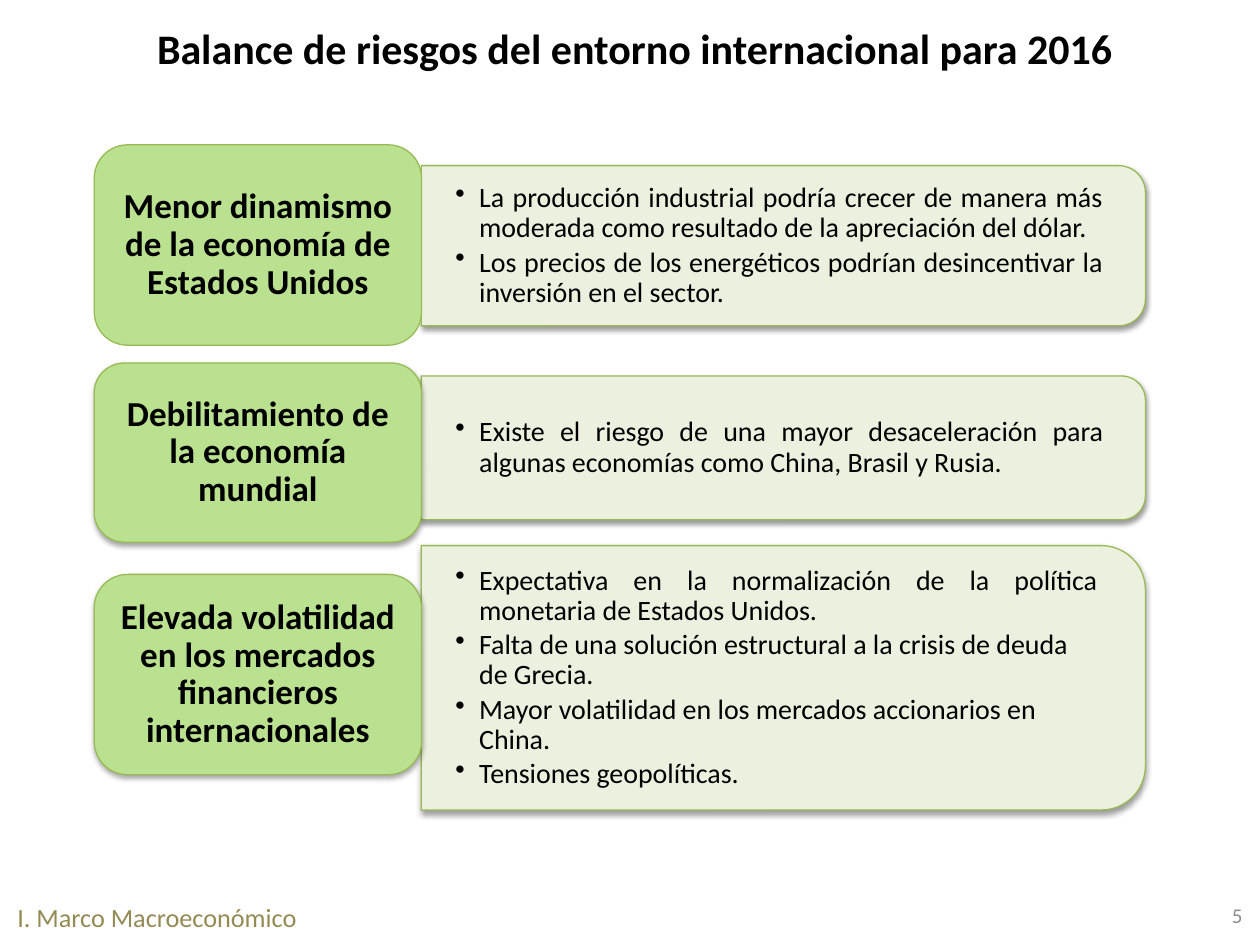
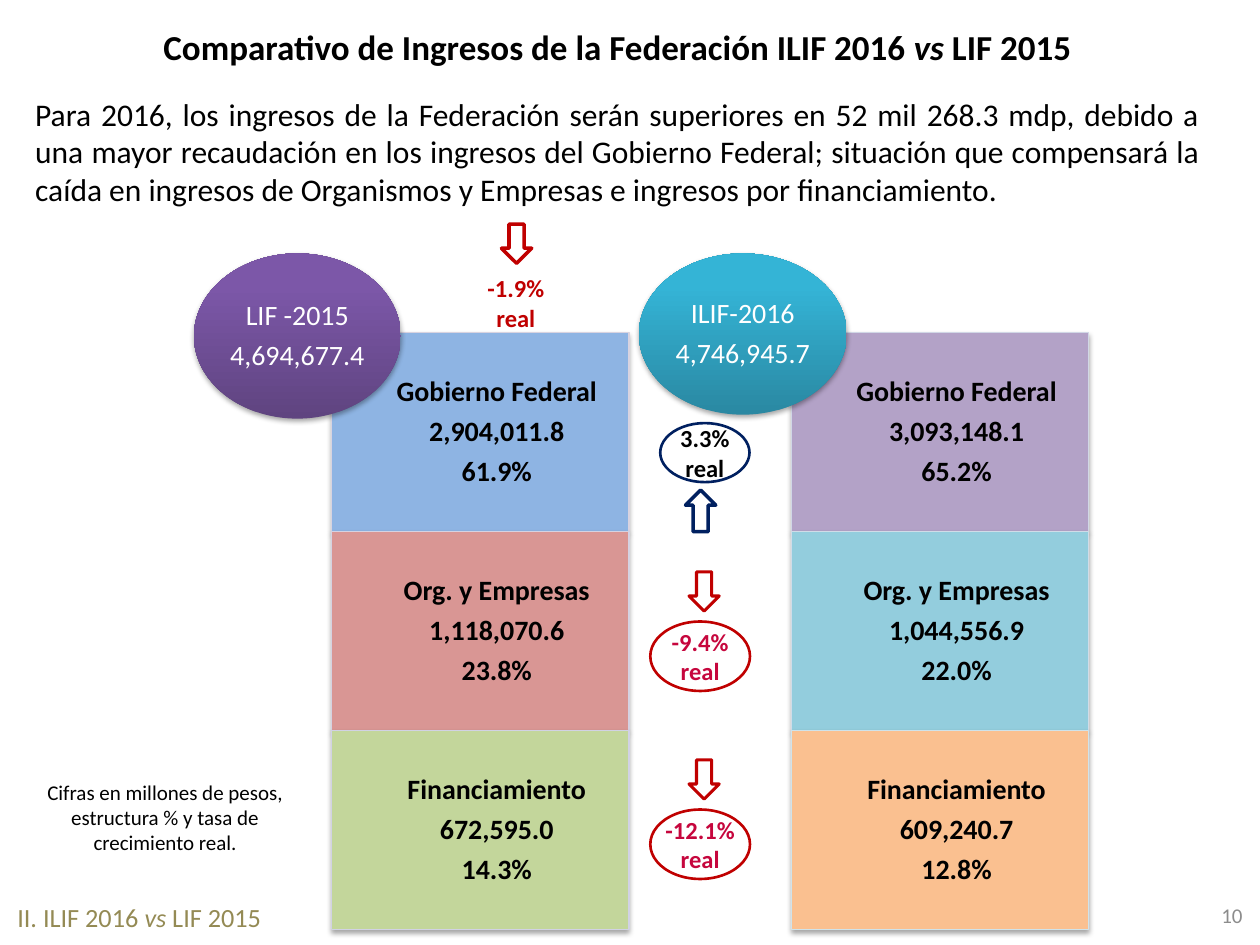
"""Build two slides on international risks and federal income."""
import dataclasses

import pptx
import pptx.dml.color
import pptx.enum.shapes
import pptx.enum.text
import pptx.oxml
import pptx.oxml.ns
import pptx.util

Cm = pptx.util.Cm
Pt = pptx.util.Pt
SHAPE = pptx.enum.shapes.MSO_SHAPE
ALIGN = pptx.enum.text.PP_ALIGN
ANCHOR = pptx.enum.text.MSO_ANCHOR
NS = pptx.oxml.ns.nsdecls("a")


@dataclasses.dataclass(frozen=True)
class Theme:
    font: str = "Calibri"
    black: str = "000000"
    white: str = "FFFFFF"
    footer: str = "948A54"
    page: str = "8C8C8C"
    label: str = "BAE18F"
    panel: str = "EBF1DE"
    green: str = "98B955"
    red: str = "C00000"
    crimson: str = "C6063D"
    navy: str = "002060"
    purple: tuple = ("5F4480", "7C57A8")
    teal: tuple = ("2A88A2", "34B4D6")
    heading_size: int = 24
    subheading_size: int = 20
    label_size: int = 20
    lead_size: int = 18
    body_size: int = 16
    footer_size: int = 15
    rate_size: int = 14
    note_size: int = 12
    tight: float = 0.9
    corner_inset: float = 0.05


def rgb(value):
    return pptx.dml.color.RGBColor.from_string(value)


class Deck:
    def __init__(self, theme):
        self.theme = theme
        self.prs = pptx.Presentation()
        self.prs.slide_width = Cm(25.4)
        self.prs.slide_height = Cm(19.05)
        self.s = None

    def slide(self, title, size, box, footer, page):
        t = self.theme
        self.s = self.prs.slides.add_slide(self.prs.slide_layouts[5])
        sp = self.s.shapes.title
        sp.left, sp.top, sp.width, sp.height = (Cm(v) for v in box)
        self.set_text(sp, [title], size, bold=True, insets=(0.25, 0))
        self.text((0.1, 18.03, 6.8, 0.9), [footer], t.footer_size, color=t.footer,
                  align=ALIGN.LEFT, anchor=ANCHOR.TOP)
        self.text((19.38, 17.93, 5.92, 1.02), [page], t.note_size, color=t.page,
                  align=ALIGN.RIGHT)

    def set_text(self, sp, lines, size, color=None, bold=False, align=ALIGN.CENTER,
                 anchor=ANCHOR.MIDDLE, insets=(0.25, 0.13), spacing=None, after=0,
                 bullet=False):
        tf = sp.text_frame
        tf.word_wrap = True
        tf.auto_size = pptx.enum.text.MSO_AUTO_SIZE.NONE
        tf.vertical_anchor = anchor
        left, top, right, bottom = insets if len(insets) == 4 else insets * 2
        tf.margin_left, tf.margin_right = Cm(left), Cm(right)
        tf.margin_top, tf.margin_bottom = Cm(top), Cm(bottom)
        for i, line in enumerate(lines):
            p = tf.add_paragraph() if i else tf.paragraphs[0]
            if bullet:
                pPr = p._p.get_or_add_pPr()
                pPr.set("marL", str(Cm(0.48)))
                pPr.set("indent", str(-Cm(0.48)))
                pPr.append(pptx.oxml.parse_xml(f'<a:buChar {NS} char="•"/>'))
            p.alignment = align[i] if isinstance(align, list) else align
            if spacing:
                p.line_spacing = spacing
                p.space_after = Pt(after * size)
            for j, part in enumerate(line.split("*")):
                r = p.add_run()
                r.text = part
                r.font.name = self.theme.font
                r.font.size = Pt(size)
                r.font.bold = bold
                r.font.italic = j % 2 == 1
                r.font.color.rgb = rgb(color or self.theme.black)

    def text(self, box, lines, size, **style):
        sp = self.s.shapes.add_textbox(*(Cm(v) for v in box))
        self.set_text(sp, lines, size, **style)

    def shape(self, kind, box, fill=None, line=None, width=0.75, shadow=0):
        sp = self.s.shapes.add_shape(kind, *(Cm(v) for v in box))
        sp.shadow.inherit = False
        if isinstance(fill, tuple):
            sp.fill.gradient()
            sp.fill.gradient_angle = 90
            for stop, value, place in zip(sp.fill.gradient_stops, fill, (0, 0.8)):
                stop.color.rgb = rgb(value)
                stop.position = place
        elif fill:
            sp.fill.solid()
            sp.fill.fore_color.rgb = rgb(fill)
        else:
            sp.fill.background()
        if line:
            sp.line.color.rgb = rgb(line)
            sp.line.width = Pt(width)
        else:
            sp.line.fill.background()
        if shadow:
            effects = sp._element.spPr.find(pptx.oxml.ns.qn("a:effectLst"))
            effects.append(pptx.oxml.parse_xml(
                f'<a:outerShdw {NS} blurRad="{Pt(3.1)}" dist="{Pt(1.7)}" dir="5400000" '
                f'rotWithShape="0"><a:srgbClr val="000000"><a:alpha val="{shadow * 1000}"/>'
                '</a:srgbClr></a:outerShdw>'))
        return sp

    def label(self, top, height, caption, shadow):
        t = self.theme
        sp = self.shape(SHAPE.ROUNDED_RECTANGLE, (1.9, top, 6.6, height), t.label, t.green,
                        shadow=shadow)
        self.set_text(sp, [caption], t.label_size, bold=True, insets=(0.2, 0.1),
                      spacing=t.tight, after=0.35)

    def panel(self, top, height, lines, align):
        t = self.theme
        left, width = 8.49, 14.6
        shift = (width - height) / 2
        sp = self.shape(SHAPE.ROUND_2_SAME_RECTANGLE,
                        (left + shift, top - shift, height, width), t.panel, t.green, shadow=38)
        sp.rotation = 90
        inset = t.corner_inset * height
        self.text((left, top + inset, width - inset, height - 2 * inset), lines, t.body_size,
                  align=align, insets=(0.69, 0.36), spacing=t.tight, after=0.15, bullet=True)

    def column(self, left, blocks):
        t = self.theme
        height = 4.01
        for i, (fill, line, *lines) in enumerate(blocks):
            sp = self.shape(SHAPE.RECTANGLE, (left, 6.71 + i * height, 6, height), fill, line,
                            shadow=35)
            self.set_text(sp, lines, t.body_size, bold=True, insets=(0.97, 0.3, 0.3, 0.3),
                          spacing=t.tight, after=0.35)

    def bubble(self, box, fill, lines):
        t = self.theme
        sp = self.shape(SHAPE.OVAL, box, fill, shadow=35)
        self.set_text(sp, lines, t.body_size, color=t.white, insets=(0, 0),
                      spacing=t.tight, after=0.35)

    def rate(self, box, lines, color, fill=None, line=None):
        sp = self.shape(SHAPE.OVAL, box, fill, line, 1.5)
        self.set_text(sp, lines, self.theme.rate_size, color=color, bold=True, insets=(0, 0))

    def arrow(self, kind, left, top, height, line, width, fill=None):
        self.shape(kind, (left, top, 0.61, height), fill, line, width)


def risks(deck):
    t = deck.theme
    deck.slide("Balance de riesgos del entorno internacional para 2016", t.heading_size,
               (0.1, 0.33, 25.4, 1.27), "I. Marco Macroeconómico", "5")
    rows = [
        ((2.92, 4.04), (3.34, 3.23), "Menor dinamismo de la economía de Estados Unidos", 0,
         ["La producción industrial podría crecer de manera más moderada como resultado de la "
          "apreciación del dólar.",
          "Los precios de los energéticos podrían desincentivar la inversión en el sector."]),
        ((7.32, 3.61), (7.58, 2.9), "Debilitamiento de la economía mundial", 35,
         ["Existe el riesgo de una mayor desaceleración para algunas economías como China, "
          "Brasil y Rusia."]),
        ((11.58, 4.04), (11, 5.33),
         "Elevada volatilidad en los mercados financieros internacionales", 35,
         ["Expectativa en la normalización de la política monetaria de Estados Unidos.",
          "Falta de una solución estructural a la crisis de deuda de Grecia.",
          "Mayor volatilidad en los mercados accionarios en China.",
          "Tensiones geopolíticas."]),
    ]
    for label_span, panel_span, caption, shadow, lines in rows:
        align = ALIGN.JUSTIFY if len(lines) < 3 else [ALIGN.JUSTIFY] + [ALIGN.LEFT] * 3
        deck.panel(*panel_span, lines, align)
        deck.label(*label_span, caption, shadow)


def income(deck):
    t = deck.theme
    deck.slide("Comparativo de Ingresos de la Federación ILIF 2016 *vs* LIF 2015",
               t.subheading_size, (0, 0.13, 24.89, 1.6), "II. ILIF 2016 *vs* LIF 2015", "10")
    deck.text((0.46, 1.78, 23.98, 2.57),
              ["Para 2016, los ingresos de la Federación serán superiores en 52 mil 268.3 mdp, "
               "debido a una mayor recaudación en los ingresos del Gobierno Federal; situación "
               "que compensará la caída en ingresos de Organismos y Empresas e ingresos por "
               "financiamiento."],
              t.lead_size, align=ALIGN.JUSTIFY, anchor=ANCHOR.TOP)
    deck.column(6.68, [
        ("8EB4E3", "D8D3E0", "Gobierno Federal", "2,904,011.8", "61.9%"),
        ("D99694", "D5D2E2", "Org. y Empresas", "1,118,070.6", "23.8%"),
        ("C3D69B", "D1D2E4", "Financiamiento", "672,595.0", "14.3%"),
    ])
    deck.bubble((3.91, 5.11, 4.17, 3.33), t.purple, ["LIF -2015", "4,694,677.4"])
    deck.column(15.95, [
        ("B3A2C7", "D1D7E6", "Gobierno Federal", "3,093,148.1", "65.2%"),
        ("93CDDD", "D0DCE8", "Org. y Empresas", "1,044,556.9", "22.0%"),
        ("FAC090", "D0E3EA", "Financiamiento", "609,240.7", "12.8%"),
    ])
    deck.bubble((12.88, 5.11, 4.19, 3.25), t.teal, ["ILIF-2016", "4,746,945.7"])
    deck.text((0.18, 15.47, 6.3, 2.01),
              ["Cifras en millones de pesos, estructura % y tasa de crecimiento real."],
              t.note_size)
    deck.arrow(SHAPE.UP_ARROW, 13.82, 9.88, 0.84, t.navy, 2, t.white)
    deck.rate((13.31, 8.53, 1.8, 1.19), ["3.3%", "real"], t.black, t.white, t.navy)
    for top, value in ((11.53, "-9.4%"), (15.32, "-12.1%")):
        deck.arrow(SHAPE.DOWN_ARROW, 13.89, top, 0.79, t.red, 1.75, t.white)
        deck.rate((13.11, top + 1, 2.01, 1.4), [value, "real"], t.crimson, t.white, t.red)
    deck.arrow(SHAPE.DOWN_ARROW, 10.11, 4.52, 0.79, t.red, 2)
    deck.rate((9.5, 5.51, 1.8, 1.19), ["-1.9% real"], t.red)


def main():
    deck = Deck(Theme())
    risks(deck)
    income(deck)
    deck.prs.save("out.pptx")


if __name__ == "__main__":
    main()
